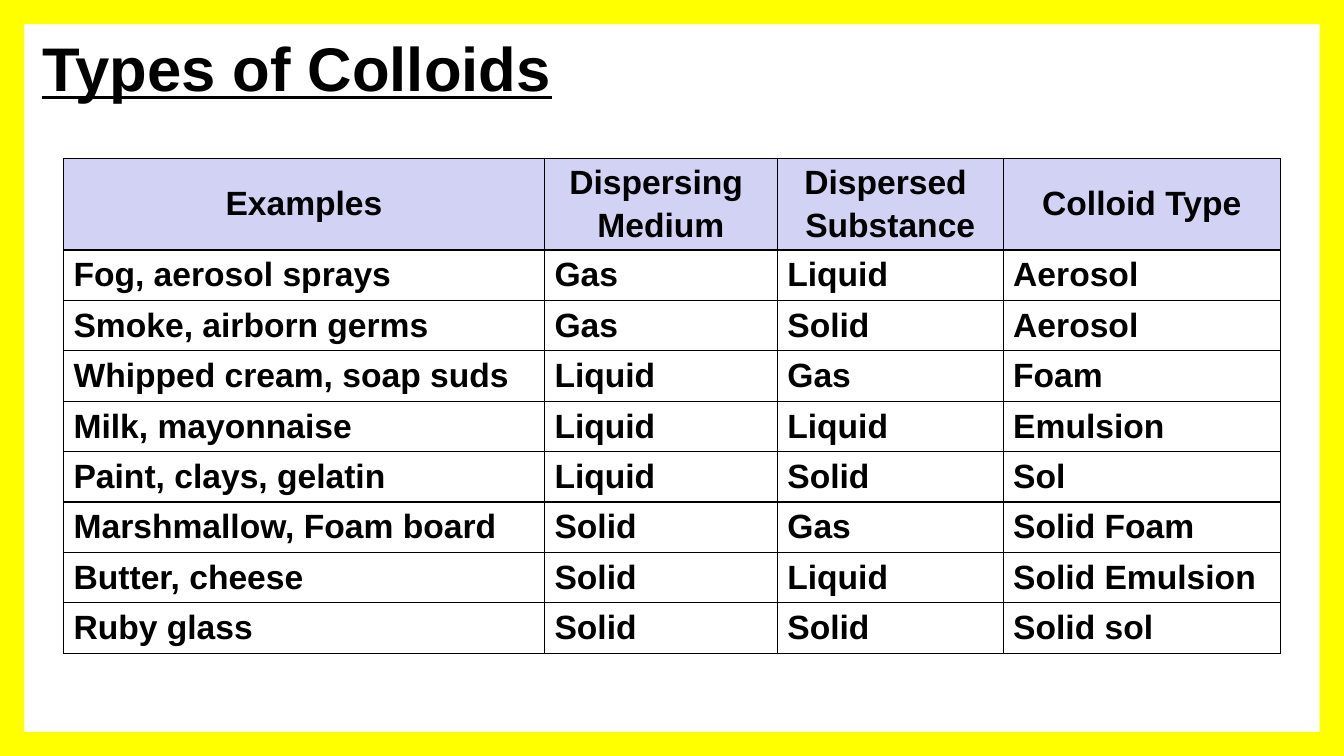
from pptx import Presentation
from pptx.dml.color import RGBColor
from pptx.enum.shapes import MSO_SHAPE
from pptx.enum.text import MSO_ANCHOR, PP_ALIGN
from pptx.oxml.ns import qn
from pptx.util import Inches, Pt
from lxml import etree

FRAME = MSO_SHAPE.FRAME
MIDDLE = MSO_ANCHOR.MIDDLE
LEFT, CENTER = PP_ALIGN.LEFT, PP_ALIGN.CENTER

FONT = "Arial"
COLORS = {"ink": "000000", "header": "D2D2F4", "frame": "FFFF00", "page": "FFFFFF"}
SLIDE_WIDTH, SLIDE_HEIGHT = 13.33, 7.5

COLUMN_WIDTHS = [4.77, 2.31, 2.24, 2.75]
HEADER_HEIGHT, ROW_HEIGHT = 0.91, 0.5
HEADINGS = ["Examples", "Dispersing \nMedium", "Dispersed \nSubstance", "Colloid Type"]
COLLOIDS = [
    ["Fog, aerosol sprays", "Gas", "Liquid", "Aerosol"],
    ["Smoke, airborn germs", "Gas", "Solid", "Aerosol"],
    ["Whipped cream, soap suds", "Liquid", "Gas", "Foam"],
    ["Milk, mayonnaise", "Liquid", "Liquid", "Emulsion"],
    ["Paint, clays, gelatin", "Liquid", "Solid", "Sol"],
    ["Marshmallow, Foam board", "Solid", "Gas", "Solid Foam"],
    ["Butter, cheese", "Solid", "Liquid", "Solid Emulsion"],
    ["Ruby glass", "Solid", "Solid", "Solid sol"],
]


def rgb(name):
    return RGBColor.from_string(COLORS[name])


def write_text(text_frame, text, size, align=LEFT, underline=False):
    text_frame.text = text
    for index, paragraph in enumerate(text_frame.paragraphs):
        paragraph.alignment = align
        if index:
            paragraph.space_before = Pt(3.6)
        font = paragraph.font
        font.name, font.size, font.bold = FONT, Pt(size), True
        font.underline = underline
        font.color.rgb = rgb("ink")


def add_cell_borders(cell):
    properties = cell._tc.get_or_add_tcPr()
    for position, side in enumerate(("a:lnL", "a:lnR", "a:lnT", "a:lnB")):
        border = etree.Element(qn(side), w=str(Pt(1)))
        fill = etree.SubElement(border, qn("a:solidFill"))
        etree.SubElement(fill, qn("a:srgbClr"), val=COLORS["ink"])
        properties.insert(position, border)


def fill_cell(cell, text, is_header):
    write_text(cell.text_frame, text, 24, CENTER if is_header else LEFT)
    cell.vertical_anchor = MIDDLE
    if is_header:
        cell.fill.solid()
        cell.fill.fore_color.rgb = rgb("header")
    else:
        cell.fill.background()
    add_cell_borders(cell)


def add_colloid_table(slide):
    rows = [HEADINGS] + COLLOIDS
    heights = [HEADER_HEIGHT] + [ROW_HEIGHT] * len(COLLOIDS)
    table = slide.shapes.add_table(
        len(rows), len(HEADINGS), Inches(0.63), Inches(1.57),
        Inches(sum(COLUMN_WIDTHS)), Inches(sum(heights))).table
    table.horz_banding = False
    for column, width in zip(table.columns, COLUMN_WIDTHS):
        column.width = Inches(width)
    for row_index, (texts, height) in enumerate(zip(rows, heights)):
        table.rows[row_index].height = Inches(height)
        for column_index, text in enumerate(texts):
            fill_cell(table.cell(row_index, column_index), text, row_index == 0)


def add_page_frame(slide):
    frame = slide.shapes.add_shape(
        FRAME, 0, 0, Inches(SLIDE_WIDTH), Inches(SLIDE_HEIGHT))
    frame.adjustments[0] = 0.032
    frame.shadow.inherit = False
    frame.fill.solid()
    frame.fill.fore_color.rgb = rgb("frame")
    frame.line.fill.background()


def add_title(slide, text):
    title = slide.shapes.add_textbox(
        Inches(0.32), Inches(0.24), Inches(12.35), Inches(0.84)).text_frame
    title.word_wrap = True
    title.vertical_anchor = MIDDLE
    write_text(title, text, 44, underline=True)


def main():
    deck = Presentation()
    deck.slide_width, deck.slide_height = Inches(SLIDE_WIDTH), Inches(SLIDE_HEIGHT)
    slide = deck.slides.add_slide(deck.slide_layouts[6])
    slide.background.fill.solid()
    slide.background.fill.fore_color.rgb = rgb("page")

    # Table, then the border around the page, then the heading
    add_colloid_table(slide)
    add_page_frame(slide)
    add_title(slide, "Types of Colloids")
    deck.save("out.pptx")


if __name__ == "__main__":
    main()
